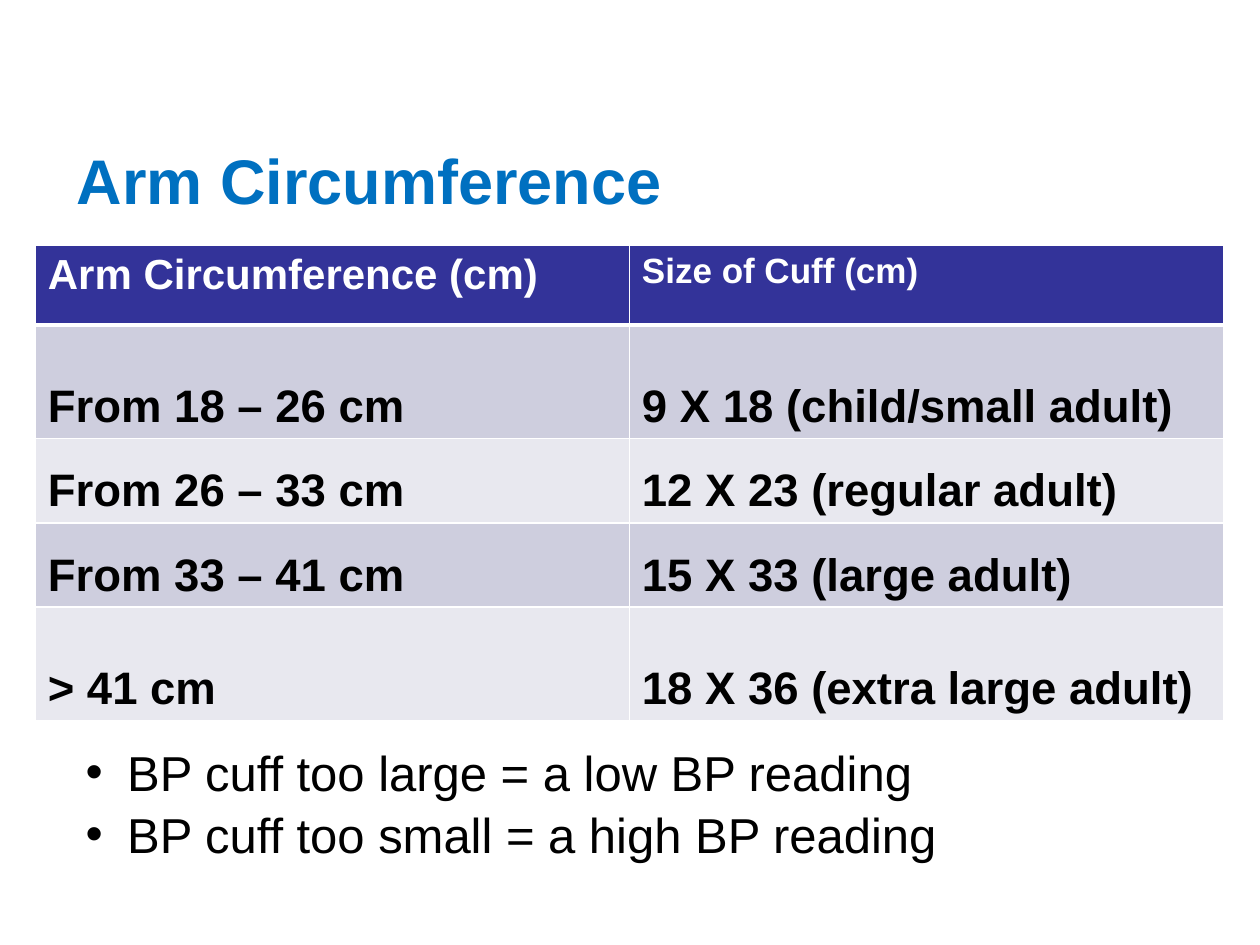
from dataclasses import dataclass

from lxml.etree import SubElement
from pptx import Presentation
from pptx.dml.color import RGBColor
from pptx.enum.text import MSO_ANCHOR, MSO_AUTO_SIZE, PP_ALIGN
from pptx.oxml.ns import qn
from pptx.util import Inches, Pt


@dataclass(frozen=True)
class Theme:
    font: str = "Arial"
    title: str = "0070C0"
    head: str = "333399"
    odd: str = "CECEDE"
    even: str = "E8E8EF"
    light: str = "FFFFFF"
    dark: str = "000000"
    title_size: int = 36
    head_sizes: tuple = (24, 20)
    cell_size: int = 26
    list_size: int = 28


THEME = Theme()
ROWS = [
    ("Arm Circumference (cm)", "Size of Cuff (cm)"),
    ("From 18 – 26 cm", "9 X 18 (child/small adult)"),
    ("From 26 – 33 cm", "12 X 23 (regular adult)"),
    ("From 33 – 41 cm", "15 X 33 (large adult)"),
    ("> 41 cm", "18 X 36 (extra large adult)"),
]
HEIGHTS = (0.63, 0.9, 0.67, 0.67, 0.9)
NOTES = ("BP cuff too large = a low BP reading",
         "BP cuff too small = a high BP reading")


def write(para, text, *, size, color=THEME.dark, bold=False, spacing=1.0):
    para.text = text
    para.alignment = PP_ALIGN.LEFT
    para.space_before = para.space_after = Pt(0)
    para.line_spacing = spacing
    font = para.font
    font.name, font.size, font.bold = THEME.font, Pt(size), bold
    font.color.rgb = RGBColor.from_string(color)


def place(shape, left, top, width, height, anchor):
    shape.left, shape.top = Inches(left), Inches(top)
    shape.width, shape.height = Inches(width), Inches(height)
    frame = shape.text_frame
    frame.auto_size = MSO_AUTO_SIZE.NONE
    frame.vertical_anchor = anchor
    return frame


def add_bullet(para, indent):
    props = para._p.get_or_add_pPr()
    props.set("marL", str(Inches(indent)))
    props.set("indent", str(-Inches(indent)))
    SubElement(props, qn("a:buFont"), typeface=THEME.font)
    SubElement(props, qn("a:buChar"), char="•")


def add_border(cell, base):
    """Draw all four edges; base is the width of the bottom one in points."""
    props = cell._tc.get_or_add_tcPr()
    edges = {"lnL": 1, "lnR": 1, "lnT": 1, "lnB": base}
    for spot, (edge, width) in enumerate(edges.items()):
        line = SubElement(props, qn(f"a:{edge}"), w=str(Pt(width)))
        fill = SubElement(line, qn("a:solidFill"))
        SubElement(fill, qn("a:srgbClr"), val=THEME.light)
        props.insert(spot, line)


def add_cell(cell, text, row, col):
    head = row == 0
    tint = THEME.head if head else THEME.odd if row % 2 else THEME.even
    cell.fill.solid()
    cell.fill.fore_color.rgb = RGBColor.from_string(tint)
    cell.vertical_anchor = MSO_ANCHOR.TOP if head else MSO_ANCHOR.BOTTOM
    add_border(cell, 3 if head else 1)
    write(cell.text_frame.paragraphs[0], text, bold=True,
          size=THEME.head_sizes[col] if head else THEME.cell_size,
          color=THEME.light if head else THEME.dark)


def add_grid(slide, left, top, width):
    table = slide.shapes.add_table(
        len(ROWS), len(ROWS[0]), Inches(left), Inches(top),
        Inches(width), Inches(sum(HEIGHTS))).table
    for row, (height, texts) in enumerate(zip(HEIGHTS, ROWS)):
        table.rows[row].height = Inches(height)
        for col, text in enumerate(texts):
            add_cell(table.cell(row, col), text, row, col)


def add_title(slide, text):
    frame = place(slide.shapes.title, 0.51, 0.99, 9, 0.86, MSO_ANCHOR.MIDDLE)
    write(frame.paragraphs[0], text, size=THEME.title_size,
          color=THEME.title, bold=True)


def add_notes(slide, lines):
    frame = place(slide.placeholders[1], 0.58, 5.82, 8.74, 1.04, MSO_ANCHOR.TOP)
    for spot, line in enumerate(lines):
        para = frame.add_paragraph() if spot else frame.paragraphs[0]
        add_bullet(para, 0.33)
        write(para, line, size=THEME.list_size, spacing=1.05)


def main():
    deck = Presentation()
    deck.slide_width, deck.slide_height = Inches(10), Inches(7.5)
    slide = deck.slides.add_slide(deck.slide_layouts[1])
    add_title(slide, "Arm Circumference")
    add_grid(slide, 0.28, 1.95, 9.43)
    add_notes(slide, NOTES)
    deck.save("out.pptx")


if __name__ == "__main__":
    main()
